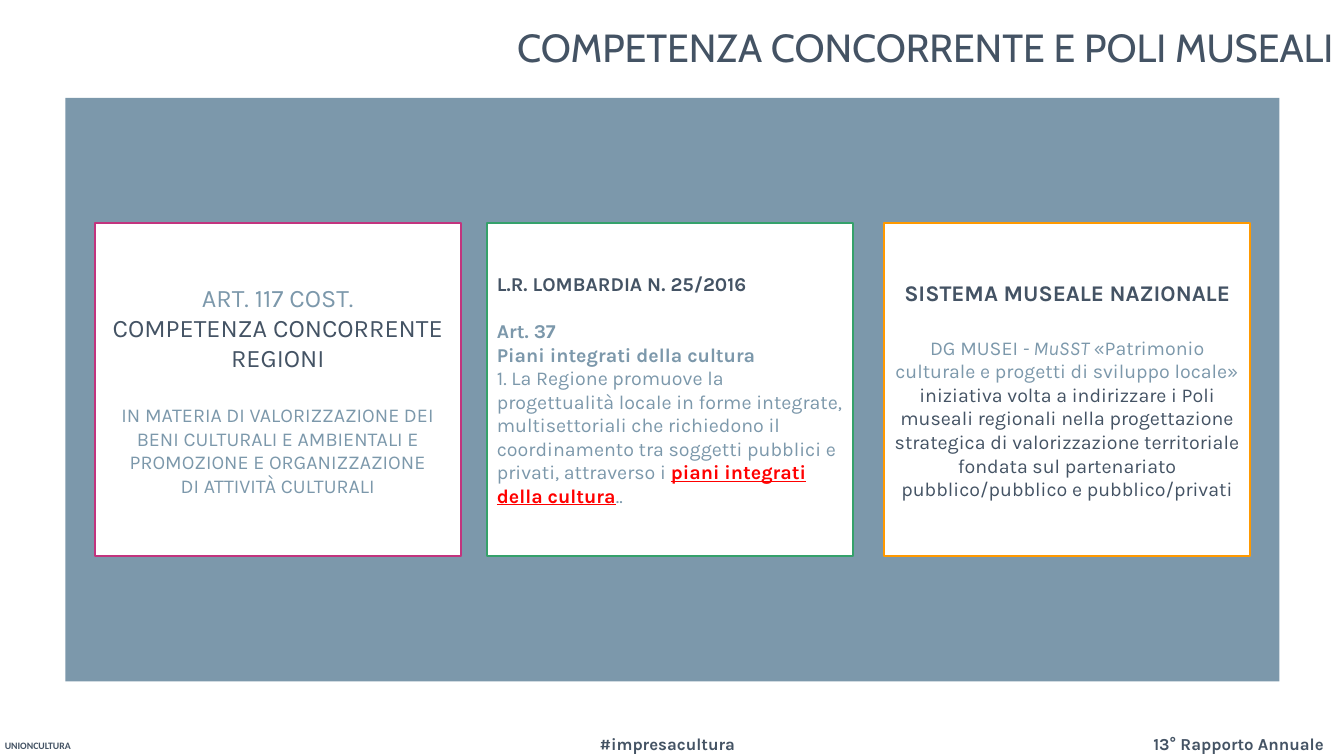
from pptx import Presentation
from pptx.dml.color import RGBColor
from pptx.enum.shapes import MSO_SHAPE
from pptx.enum.text import MSO_ANCHOR, MSO_AUTO_SIZE, PP_ALIGN
from pptx.util import Emu, Pt

RECTANGLE = MSO_SHAPE.RECTANGLE
TOP, MIDDLE = MSO_ANCHOR.TOP, MSO_ANCHOR.MIDDLE
FIT_SHAPE = MSO_AUTO_SIZE.SHAPE_TO_FIT_TEXT
LEFT, CENTER, RIGHT = PP_ALIGN.LEFT, PP_ALIGN.CENTER, PP_ALIGN.RIGHT

EMU_PER_PX = 9144
COLORS = {
    "dark": "445364",
    "steel": "7C98AB",
    "white": "FFFFFF",
    "magenta": "C2347E",
    "green": "35A16B",
    "orange": "FF9900",
    "red": "FF0000",
}
CARD_TOP, CARD_WIDTH, CARD_HEIGHT = 221, 363, 331


def px(*lengths):
    return [Emu(length * EMU_PER_PX) for length in lengths]


def color(name):
    return RGBColor.from_string(COLORS[name])


def span(text, size=14, ink="steel", **style):
    """Describe one run; style holds font attributes such as bold or italic."""
    return text, size, ink, style


class SlideBuilder:
    def __init__(self, page, font_name):
        self.page = page
        self.font_name = font_name

    def fill_text(self, frame, paragraphs, align, font_name=None):
        """Fill a frame from (space before in points, spans) pairs."""
        for index, (space, spans) in enumerate(paragraphs):
            para = frame.paragraphs[0] if index == 0 else frame.add_paragraph()
            para.alignment = align
            para.space_before = Pt(space)
            for text, size, ink, style in spans:
                run = para.add_run()
                run.text = text
                run.font.name = font_name or self.font_name
                run.font.size = Pt(size)
                run.font.color.rgb = color(ink)
                run.font.bold = style.get("bold", False)
                run.font.italic = style.get("italic", False)
                run.font.underline = style.get("underline", False)

    def label(self, bounds, content, align=LEFT, font_name=None, wrap=False, anchor=TOP):
        box = self.page.shapes.add_textbox(*px(*bounds))
        frame = box.text_frame
        frame.word_wrap = wrap
        frame.vertical_anchor = anchor
        if not wrap:
            frame.auto_size = FIT_SHAPE
        self.fill_text(frame, [(0, [content])], align, font_name)
        return frame.paragraphs[0]

    def panel(self, bounds, fill, border=None):
        shape = self.page.shapes.add_shape(RECTANGLE, *px(*bounds))
        shape.shadow.inherit = False
        shape.fill.solid()
        shape.fill.fore_color.rgb = color(fill)
        if border:
            shape.line.color.rgb = color(border)
            shape.line.width = Pt(1.5)
        else:
            shape.line.fill.background()
        return shape

    def card(self, left, border, align, paragraphs):
        shape = self.panel((left, CARD_TOP, CARD_WIDTH, CARD_HEIGHT), "white", border)
        frame = shape.text_frame
        frame.word_wrap = True
        frame.vertical_anchor = MIDDLE
        self.fill_text(frame, paragraphs, align)


CARDS = [
    (94, "magenta", CENTER, [
        (0, [span("ART. 117 COST.", 18)]),
        (0, [span("COMPETENZA CONCORRENTE REGIONI", 18, "dark")]),
        (21.6, [span("IN MATERIA DI VALORIZZAZIONE DEI")]),
        (0, [span("BENI CULTURALI E AMBIENTALI E PROMOZIONE E ORGANIZZAZIONE")]),
        (0, [span("DI ATTIVITÀ CULTURALI")]),
    ]),
    (483, "green", LEFT, [
        (0, [span("L.R. LOMBARDIA N. 25/2016", ink="dark", bold=True)]),
        (16.8, [span("Art. 37", bold=True)]),
        (0, [span("Piani integrati della cultura", bold=True)]),
        (0, [
            span("1. La Regione promuove la progettualità locale in forme integrate, "
                 "multisettoriali che richiedono il coordinamento tra soggetti pubblici "
                 "e privati, attraverso i "),
            span("piani integrati della cultura", ink="red", bold=True, underline=True),
            span(".."),
        ]),
    ]),
    (877, "orange", CENTER, [
        (0, [span("SISTEMA MUSEALE NAZIONALE", 16, "dark", bold=True)]),
        (21.6, [
            span("DG MUSEI "),
            span("- MuSST ", italic=True),
            span("«Patrimonio culturale e progetti di sviluppo locale»"),
        ]),
        (0, [span("iniziativa volta a indirizzare i Poli museali regionali nella "
                  "progettazione strategica di valorizzazione territoriale fondata sul "
                  "partenariato pubblico/pubblico e pubblico/privati", ink="dark")]),
    ]),
]


def main():
    deck = Presentation()
    deck.slide_width, deck.slide_height = px(1333, 750)
    page = deck.slides.add_slide(deck.slide_layouts[6])
    builder = SlideBuilder(page, "Karla")

    builder.label((-10, 729, 95, 22), span("UNIONCULTURA", 7, "dark", bold=True),
                  CENTER, "Calibri", wrap=True)
    builder.label((1134, 723, 205, 30), span("13° Rapporto Annuale", 12, "dark", bold=True))
    builder.label((585, 723, 163, 30), span("#impresacultura", 12, "dark", bold=True))
    title = builder.label((205, 1, 1127, 96),
                          span("COMPETENZA CONCORRENTE E POLI MUSEALI", 28, "dark"),
                          RIGHT, "Cabin", wrap=True, anchor=MIDDLE)
    title.line_spacing = 0.9

    builder.panel((65, 97, 1204, 579), "steel")
    for card in CARDS:
        builder.card(*card)

    deck.save("out.pptx")


if __name__ == "__main__":
    main()
